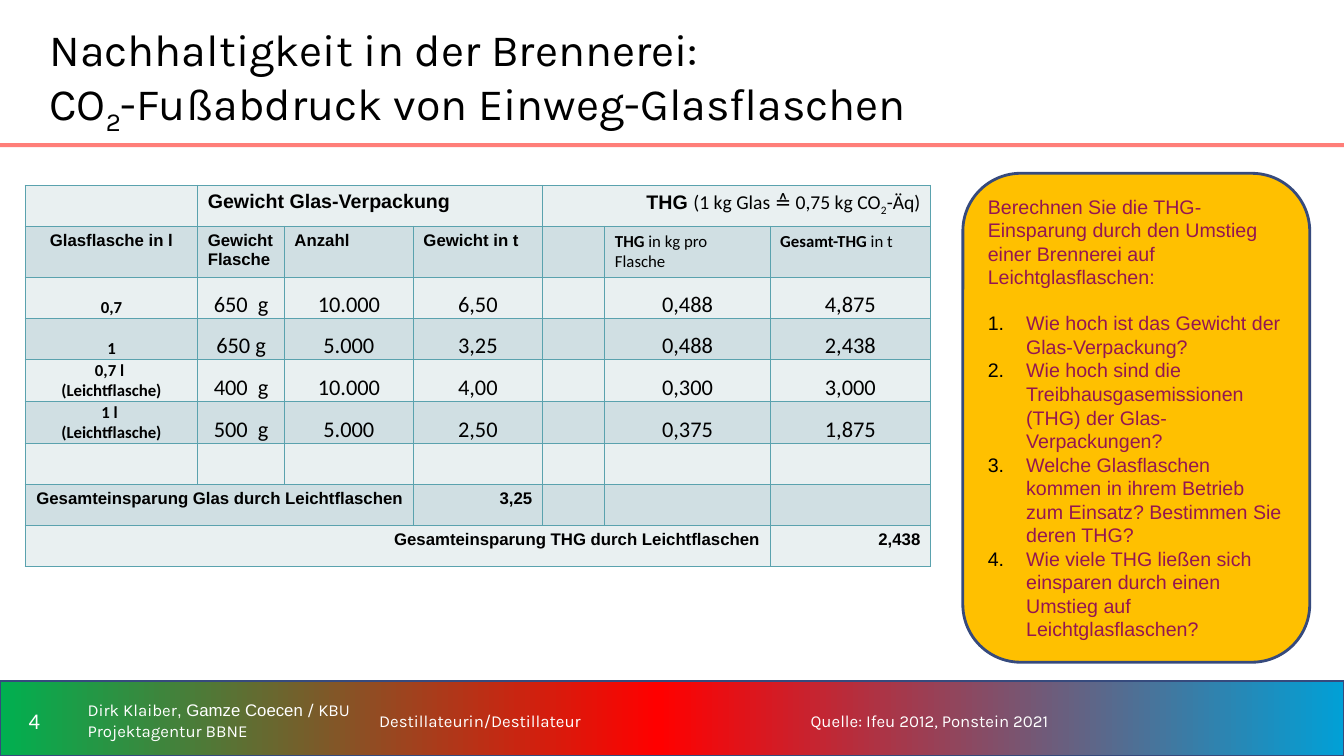
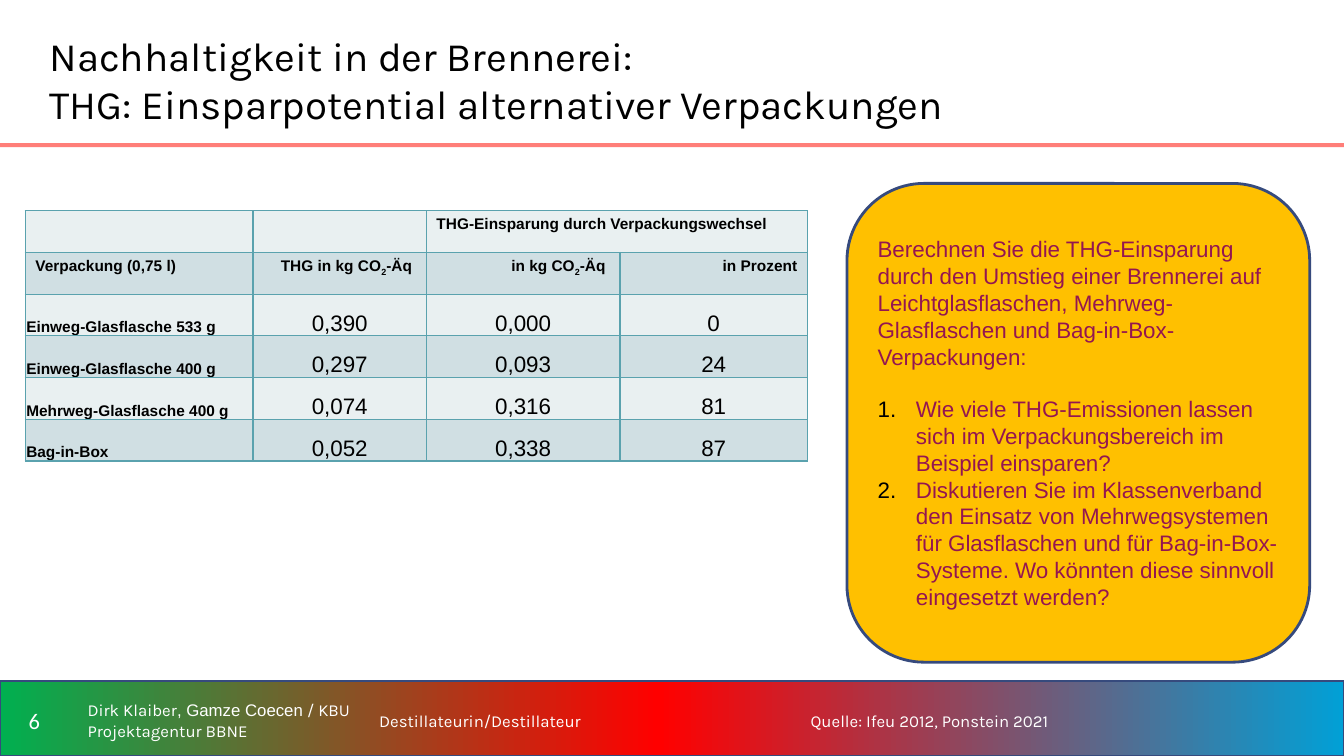
import copy
import lxml.etree
import pptx
import pptx.dml.color
import pptx.enum.shapes
import pptx.enum.text
import pptx.oxml.ns
import pptx.util


class Theme:
    black, white = "000000", "FFFFFF"
    plum, amber, navy, coral = "941651", "FFC000", "364A7D", "FF7E79"
    band_stops = ((0, "00B050"), (49, "FF0000"), (100, "01A0D6"))
    table_rows, table_line = ("E9F0F1", "D0DFE3"), "5AA2AE"
    display, sans, humanist = "Karla", "Arial", "Calibri"
    footer, number, figure, label = 12, 16, 16, 12


qn = pptx.oxml.ns.qn
rgb = pptx.dml.color.RGBColor.from_string
inch, pt = pptx.util.Inches, pptx.util.Pt
ALIGN = {"l": pptx.enum.text.PP_ALIGN.LEFT, "c": pptx.enum.text.PP_ALIGN.CENTER,
         "r": pptx.enum.text.PP_ALIGN.RIGHT}
ANCHOR = {"t": pptx.enum.text.MSO_ANCHOR.TOP, "m": pptx.enum.text.MSO_ANCHOR.MIDDLE,
          "b": pptx.enum.text.MSO_ANCHOR.BOTTOM}
WIDTH, HEIGHT = inch(13.33), inch(7.5)
WIDE, TIGHT = (0.1, 0.05, 0.1, 0.05), (0.01, 0.01, 0.01, 0)


def share(left, top, width, height):
    """Turn percentages of the slide into lengths."""
    return [int(part * whole / 100) for part, whole in
            zip((left, top, width, height), (WIDTH, HEIGHT) * 2)]


def write(target, paragraphs, size, font=Theme.sans, color=Theme.black, bold=False,
          align="l", anchor="m", inset=WIDE, spacing=None, indent=None, numbered_from=None):
    """Fill a shape or cell; a paragraph is a string or a list of runs (text, changes)."""
    frame = target.text_frame
    holder = target if hasattr(target, "is_merge_origin") else frame
    holder.vertical_anchor = ANCHOR[anchor]
    (holder.margin_left, holder.margin_top,
     holder.margin_right, holder.margin_bottom) = map(inch, inset)
    if holder is frame:
        frame.word_wrap = True
        frame.auto_size = pptx.enum.text.MSO_AUTO_SIZE.NONE
    if isinstance(paragraphs, str):
        paragraphs = [paragraphs]
    for index, runs in enumerate(paragraphs):
        paragraph = frame.add_paragraph() if index else frame.paragraphs[0]
        properties = paragraph._p.get_or_add_pPr()
        numbered = numbered_from is not None and index >= numbered_from
        if indent and (numbered or numbered_from is None):
            properties.set("marL", str(inch(indent)))
            properties.set("indent", str(-inch(indent)))
        if numbered:
            bullet_color = lxml.etree.SubElement(properties, qn("a:buClr"))
            lxml.etree.SubElement(bullet_color, qn("a:srgbClr"), val=Theme.black)
            lxml.etree.SubElement(properties, qn("a:buFont"), typeface=font)
            lxml.etree.SubElement(properties, qn("a:buAutoNum"), type="arabicPeriod")
        else:
            lxml.etree.SubElement(properties, qn("a:buNone"))
        paragraph.alignment = ALIGN[align]
        paragraph.space_before = pt(round(size * 1.15) if index and index == numbered_from else 0)
        if spacing:
            paragraph.line_spacing = spacing
        for item in [runs] if isinstance(runs, str) else runs:
            text, changes = (item, {}) if isinstance(item, str) else item
            for line_number, line in enumerate(text.split("\n")):
                if line_number:
                    paragraph.add_line_break()
                run = paragraph.add_run()
                run.text = line
                run.font.size = pt(size)
                run.font.name = changes.get("font", font)
                run.font.bold = changes.get("bold", bold)
                run.font.color.rgb = rgb(color)
                if changes.get("sub"):
                    run.font._element.set("baseline", "-25000")


# Content: a table cell is empty, a text, or a text with changes to its format
HUMANIST = {"font": Theme.humanist}
PLAIN = {"font": Theme.humanist, "bold": False}
SUB = {"sub": True}
RIGHT, CENTER = {"align": "r"}, {"align": "c"}
HEAD = {"bold": True, "anchor": "t"}
FIGURE = {"size": Theme.figure, "align": "c", "anchor": "b", "inset": TIGHT}
CO2_HEAD = "kg CO", ("2", SUB), "-Äq "

pages = [
    dict(
        number="4", title_size=32,
        title=["Nachhaltigkeit in der Brennerei:\nCO", ("2", SUB),
               "-Fußabdruck von Einweg-Glasflaschen"],
        table_at=(1.88, 24.53), row_height=5.42,
        columns=(12.83, 6.45, 9.6, 9.6, 4.65, 12.3, 11.93),
        merges=((0, 1, 3), (0, 4, 6), (7, 0, 2), (8, 0, 5)),
        head=dict(HEAD, size=Theme.label), figure=dict(FIGURE, font=Theme.humanist),
        label=dict(size=Theme.label, bold=True),
        data_rows=range(2, 7),
        rows=[
            ["", ("Gewicht Glas-Verpackung", {"size": 14}), "", "",
             ([["THG ", ("(1 kg Glas ≙ 0,75 kg CO", PLAIN), ("2", PLAIN | SUB),
                ("-Äq)", PLAIN)]], {"size": 14, "align": "r"}), "", ""],
            [("Glasflasche in l", CENTER), "Gewicht Flasche", "Anzahl", "Gewicht in t", "",
             [[("THG", HUMANIST), (" in kg pro Flasche", PLAIN)]],
             [[("Gesamt-THG", HUMANIST), (" in t", PLAIN)]]],
            ["0,7", "650  g", "10.000", "6,50", "", "0,488", "4,875"],
            ["1", "650 g", "5.000", "3,25", "", "0,488", "2,438"],
            [["0,7 l ", "(Leichtflasche)"], "400  g", "10.000", "4,00", "", "0,300", "3,000"],
            [["1 l ", "(Leichtflasche)"], "500  g", "5.000", "2,50", "", "0,375", "1,875"],
            [""] * 7,
            [("Gesamteinsparung Glas durch Leichtflaschen", RIGHT), "", "",
             ("3,25", RIGHT), "", "", ""],
            [("Gesamteinsparung THG durch Leichtflaschen", RIGHT), "", "", "", "", "",
             ("2,438", RIGHT)],
        ],
        task_at=(71.64, 22.93, 25.81, 64.67), task_size=14,
        task=["Berechnen Sie die THG-Einsparung durch den Umstieg einer Brennerei auf "
              "Leichtglasflaschen:",
              "Wie hoch ist das Gewicht der Glas-Verpackung?",
              "Wie hoch sind die Treibhausgasemissionen (THG) der Glas-Verpackungen?",
              "Welche Glasflaschen kommen in ihrem Betrieb zum Einsatz? Bestimmen Sie deren THG?",
              "Wie viele THG ließen sich einsparen durch einen Umstieg auf Leichtglasflaschen?"],
    ),
    dict(
        number="6", title_size=28.8,
        title=["Nachhaltigkeit in der Brennerei:\n"
               "THG: Einsparpotential alternativer Verpackungen"],
        table_at=(1.88, 27.87), row_height=5.52,
        columns=(16.95, 12.9, 14.4, 13.95),
        merges=((0, 2, 3),),
        head=dict(HEAD, size=11), figure=FIGURE,
        label=dict(size=11, bold=True, align="l"),
        data_rows=range(2, 6),
        rows=[
            ["", "", "THG-Einsparung durch Verpackungswechsel", ""],
            ["Verpackung (0,75 l)", ([["THG in ", *CO2_HEAD]], RIGHT),
             ([["in ", *CO2_HEAD]], RIGHT), ("in Prozent", RIGHT)],
            ["Einweg-Glasflasche 533 g", "0,390", "0,000", "0"],
            ["Einweg-Glasflasche 400 g", "0,297", "0,093", "24"],
            ["Mehrweg-Glasflasche 400 g", "0,074", "0,316", "81"],
            ["Bag-in-Box", "0,052", "0,338", "87"],
        ],
        task_at=(63.02, 24.27, 34.43, 63.33), task_size=16,
        task=["Berechnen Sie die THG-Einsparung durch den Umstieg einer Brennerei auf "
              "Leichtglasflaschen, Mehrweg-Glasflaschen und Bag-in-Box-Verpackungen:",
              "Wie viele THG-Emissionen lassen sich im Verpackungsbereich im Beispiel einsparen?",
              "Diskutieren Sie im Klassenverband den Einsatz von Mehrwegsystemen für "
              "Glasflaschen und für Bag-in-Box-Systeme. Wo könnten diese sinnvoll "
              "eingesetzt werden?"],
    ),
]

# Shared layout: title and footer places
deck = pptx.Presentation()
deck.slide_width, deck.slide_height = WIDTH, HEIGHT
layout = deck.slide_layouts[3]
FOOTER_TOP, FOOTER_HEIGHT = 91.2, 8.13
places = ((2.93, 2.67, 72.1, 15.73), (27.46, FOOTER_TOP, 31.43, FOOTER_HEIGHT),
          (59.56, FOOTER_TOP, 37.88, FOOTER_HEIGHT))
for holder, place in zip(layout.placeholders, places):
    holder.left, holder.top, holder.width, holder.height = share(*place)

footer_style = dict(size=Theme.footer, font=Theme.display, color=Theme.white)

for page in pages:
    slide = deck.slides.add_slide(layout)
    title, profession, source = slide.placeholders

    # Footer band and title rule, moved to the layout once
    if page is pages[0]:
        band = slide.shapes.add_shape(pptx.enum.shapes.MSO_SHAPE.RECTANGLE,
                                      *share(0, 90.1, 100, 9.9))
        band.fill.gradient()
        band.fill.gradient_angle = 0
        stops = band.element.find(".//" + qn("a:gsLst"))
        stops.clear()
        for position, color in Theme.band_stops:
            stop = lxml.etree.SubElement(stops, qn("a:gs"), pos=str(position * 1000))
            lxml.etree.SubElement(stop, qn("a:srgbClr"), val=color)
        band.line.color.rgb = rgb(Theme.navy)
        band.line.width = pt(1)
        rule = slide.shapes.add_shape(pptx.enum.shapes.MSO_SHAPE.RECTANGLE,
                                      *share(0, 18.93, 100, 0.53))
        rule.fill.solid()
        rule.fill.fore_color.rgb = rgb(Theme.coral)
        rule.line.fill.background()
        for shape_id, shared in enumerate((band, rule), 20):
            shared.shadow.inherit = False
            shared.element.nvSpPr.cNvPr.set("id", str(shape_id))
            layout.shapes.element.append(shared.element)

    # Title and footer
    write(title, [page["title"]], page["title_size"], font=Theme.display)
    for holder, text in ((profession, "Destillateurin/Destillateur"),
                         (source, "Quelle: Ifeu 2012, Ponstein 2021")):
        write(holder, text, spacing=1.1, indent=0.04, **footer_style)
    page_number = slide.shapes.add_textbox(*share(0, FOOTER_TOP, 5.1, FOOTER_HEIGHT))
    write(page_number, page["number"], Theme.number, font=Theme.humanist,
          color=Theme.white, align="c")
    authors = slide.shapes.add_textbox(*share(5.78, FOOTER_TOP, 21.68, FOOTER_HEIGHT))
    write(authors, [["Dirk Klaiber", (", Gamze Coecen", {"font": Theme.sans}),
                     " / KBU\nProjektagentur BBNE"]], **footer_style)

    # Table
    rows, columns = page["rows"], page["columns"]
    balance = slide.shapes.add_table(
        len(rows), len(columns),
        *share(*page["table_at"], sum(columns), page["row_height"] * len(rows))).table
    balance.first_row = balance.horz_banding = False
    for column, width in zip(balance.columns, columns):
        column.width = int(WIDTH * width / 100)
    for row_number, first, last in page["merges"]:
        balance.cell(row_number, first).merge(balance.cell(row_number, last))
    for row_number, values in enumerate(rows):
        for column_number, value in enumerate(values):
            cell = balance.cell(row_number, column_number)
            borders = cell._tc.get_or_add_tcPr()
            for side in ("a:lnL", "a:lnR", "a:lnT", "a:lnB"):
                edge = lxml.etree.SubElement(borders, qn(side), w=str(pt(1)))
                paint = lxml.etree.SubElement(edge, qn("a:solidFill"))
                lxml.etree.SubElement(paint, qn("a:srgbClr"), val=Theme.table_line)
            cell.fill.solid()
            cell.fill.fore_color.rgb = rgb(Theme.table_rows[row_number % 2])
            if not value:
                continue
            text, changes = value if isinstance(value, tuple) else (value, {})
            style = page["head"]
            if row_number in page["data_rows"]:
                style = page["figure"] | (page["label"] if column_number == 0 else {})
            write(cell, text, **(style | changes))

    # Task card
    task = slide.shapes.add_shape(pptx.enum.shapes.MSO_SHAPE.ROUNDED_RECTANGLE,
                                  *share(*page["task_at"]))
    task.shadow.inherit = False
    task.fill.solid()
    task.fill.fore_color.rgb = rgb(Theme.amber)
    task.line.color.rgb = rgb(Theme.navy)
    task.line.width = pt(2)
    write(task, page["task"], page["task_size"], color=Theme.plum,
          inset=(0.08, 0, 0.08, 0), indent=0.38, numbered_from=1)

deck.save("out.pptx")
